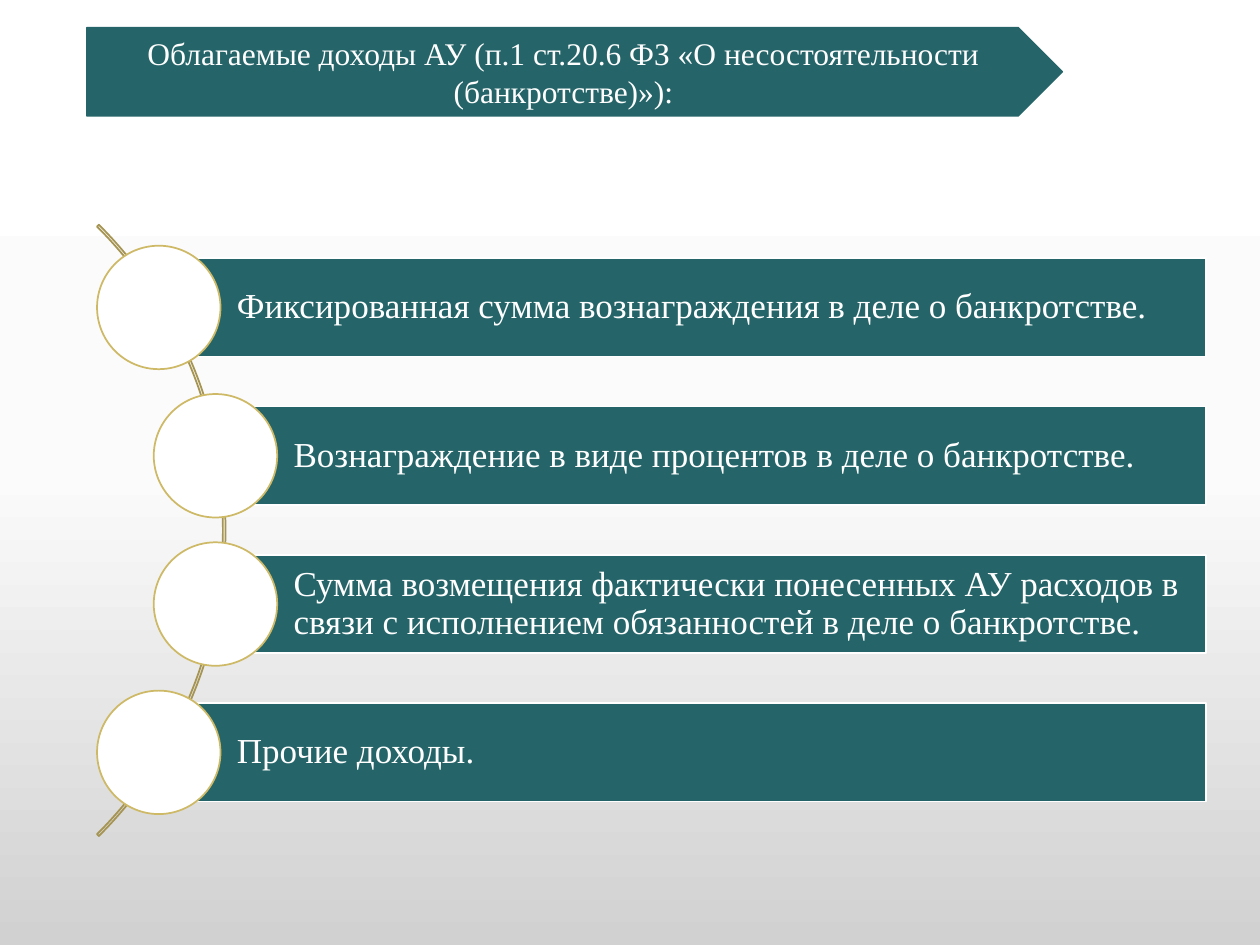
from copy import deepcopy

from pptx import Presentation
from pptx.dml.color import RGBColor
from pptx.enum.shapes import MSO_SHAPE
from pptx.enum.text import MSO_ANCHOR, PP_ALIGN
from pptx.oxml.ns import qn
from pptx.util import Inches, Pt

PENTAGON, ARC = MSO_SHAPE.PENTAGON, MSO_SHAPE.BLOCK_ARC
RECTANGLE, OVAL = MSO_SHAPE.RECTANGLE, MSO_SHAPE.OVAL
MIDDLE = MSO_ANCHOR.MIDDLE
LEFT, CENTER = PP_ALIGN.LEFT, PP_ALIGN.CENTER

FONT = "Times New Roman"
COLORS = {
    "teal": "256569",
    "white": "FFFFFF",
    "gold": "CEB966",
    "dark_gold": "A59452",
}
BACKGROUND_STOPS = [(0, "FFFFFF"), (0.5, "FBFBFB"), (1, "D1D1D1")]

TITLE = "Облагаемые доходы АУ (п.1 ст.20.6 ФЗ «О несостоятельности (банкротстве)»):"
INCOMES = [
    (1.26, "Фиксированная сумма вознаграждения в деле о банкротстве."),
    (1.71, "Вознаграждение в виде процентов в деле о банкротстве."),
    (1.71, "Сумма возмещения фактически понесенных АУ расходов в связи с "
           "исполнением обязанностей в деле о банкротстве."),
    (1.26, "Прочие доходы."),
]
FIRST_CENTER, ROW_STEP = 2.44, 1.177
BAR_RIGHT, BAR_HEIGHT, CIRCLE_SIZE = 9.57, 0.78, 0.98


def color(name):
    return RGBColor.from_string(COLORS[name])


def paint_background(page):
    fill = page.background.fill
    fill.gradient()
    fill.gradient_angle = 270
    stop_list = page.element.find(".//" + qn("a:gsLst"))
    stop_list.insert(1, deepcopy(stop_list[0]))
    for stop, (position, value) in zip(fill.gradient_stops, BACKGROUND_STOPS):
        stop.position = position
        stop.color.rgb = RGBColor.from_string(value)


def add_box(page, kind, place, fill, line):
    box = page.shapes.add_shape(kind, *(Inches(length) for length in place))
    box.shadow.inherit = False
    if fill:
        box.fill.solid()
        box.fill.fore_color.rgb = color(fill)
    else:
        box.fill.background()
    box.line.color.rgb = color(line)
    box.line.width = Pt(1)
    return box


def write(box, text, size, alignment):
    frame = box.text_frame
    frame.text = text
    frame.word_wrap = True
    frame.vertical_anchor = MIDDLE
    para = frame.paragraphs[0]
    para.alignment = alignment
    font = para.runs[0].font
    font.name, font.size = FONT, Pt(size)
    font.color.rgb = color("white")
    return frame


def add_title(page):
    banner = add_box(page, PENTAGON, (0.69, 0.22, 7.74, 0.7), "teal", "teal")
    write(banner, TITLE, 18, CENTER)


def add_arc(page):
    arc = add_box(page, ARC, (-5.07, 0.78, 6.86, 6.86), None, "dark_gold")
    for index, value in enumerate((189, 27, 0.003)):
        arc.adjustments[index] = value


def add_income(page, row, left, text):
    middle = FIRST_CENTER + row * ROW_STEP
    bar_place = (left, middle - BAR_HEIGHT / 2, BAR_RIGHT - left, BAR_HEIGHT)
    bar = add_box(page, RECTANGLE, bar_place, "teal", "white")
    frame = write(bar, text, 20, LEFT)
    frame.paragraphs[0].line_spacing = 0.9
    frame.margin_left = Inches(0.62)
    frame.margin_top = frame.margin_right = frame.margin_bottom = Inches(0.06)
    radius = CIRCLE_SIZE / 2
    circle_place = (left - radius, middle - radius, CIRCLE_SIZE, CIRCLE_SIZE)
    add_box(page, OVAL, circle_place, "white", "gold")


def main():
    deck = Presentation()
    deck.slide_width, deck.slide_height = Inches(10), Inches(7.5)
    page = deck.slides.add_slide(deck.slide_layouts[6])
    paint_background(page)
    add_title(page)
    add_arc(page)
    for row, (left, text) in enumerate(INCOMES):
        add_income(page, row, left, text)
    deck.save("out.pptx")


if __name__ == "__main__":
    main()
